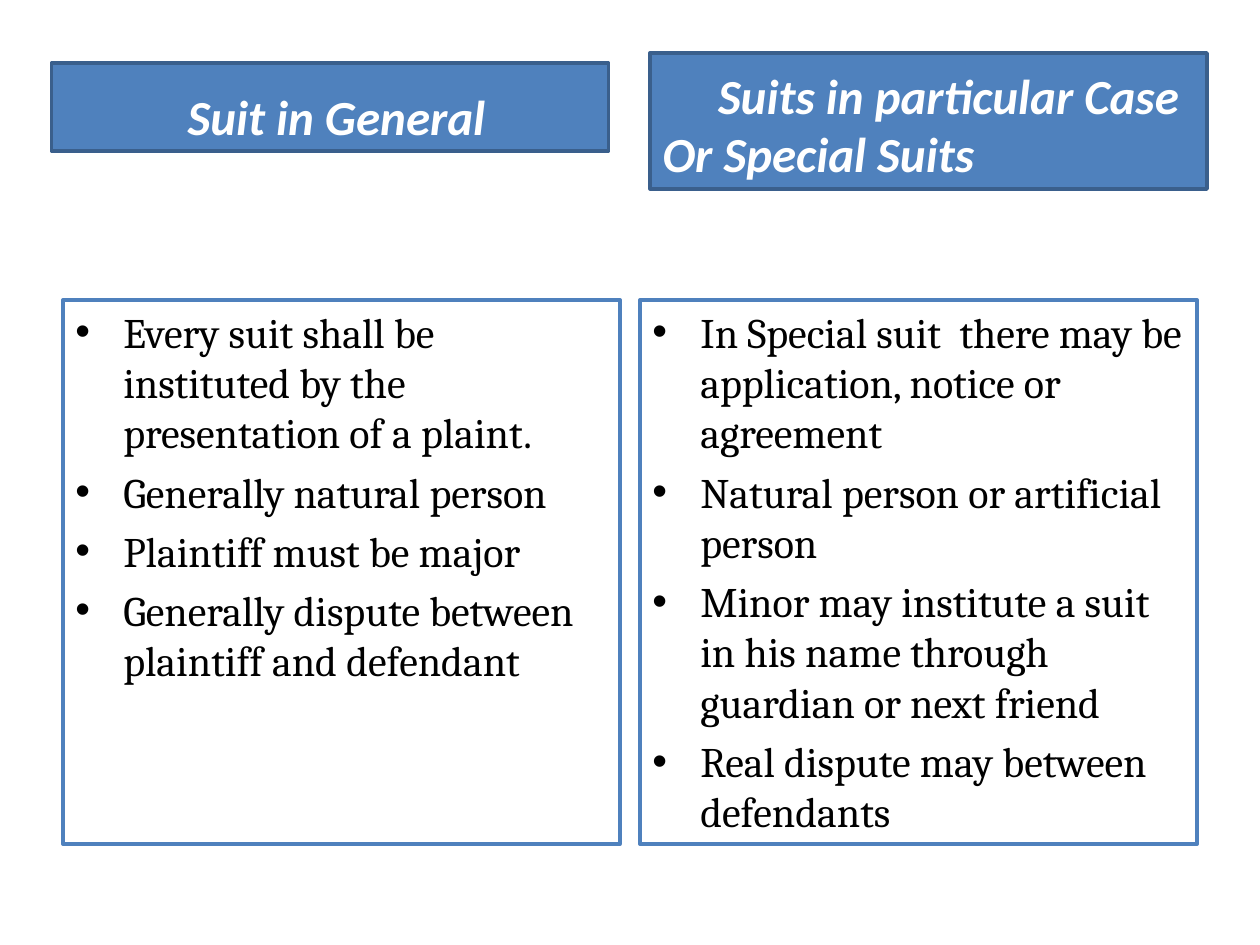
from pptx import Presentation
from pptx.dml.color import RGBColor
from pptx.enum.shapes import MSO_SHAPE
from pptx.enum.text import MSO_ANCHOR, PP_ALIGN
from pptx.oxml.ns import qn
from pptx.util import Inches, Pt
from lxml import etree

RECTANGLE = MSO_SHAPE.RECTANGLE
TOP, BOTTOM = MSO_ANCHOR.TOP, MSO_ANCHOR.BOTTOM
LEFT = PP_ALIGN.LEFT

BLUE = RGBColor(0x4F, 0x81, 0xBD)
DARK_BLUE = RGBColor(0x3A, 0x5F, 0x8C)
WHITE = RGBColor(0xFF, 0xFF, 0xFF)
BLACK = RGBColor(0, 0, 0)

COLUMN_WIDTH = 4.42
LIST_TOP, LIST_HEIGHT = 2.38, 4.32
HANGING = 0.38

COLUMNS = [
    {
        "heading": "Suit in General",
        "heading_place": (0.41, 0.5, 0.7),  # left, top, height
        "heading_indent": 0.98,
        "list_left": 0.5,
        "points": [
            "Every suit shall be instituted by the presentation of a plaint.",
            "Generally natural person",
            "Plaintiff must be major",
            "Generally dispute between plaintiff and defendant",
        ],
    },
    {
        "heading": "Suits in particular Case Or Special Suits",
        "heading_place": (5.16, 0.42, 1.08),
        "heading_indent": 0.44,
        "list_left": 5.08,
        "points": [
            "In Special suit  there may be application, notice or agreement",
            "Natural person or artificial person",
            "Minor may institute a suit in his name through guardian or next friend",
            "Real dispute may between defendants",
        ],
    },
]


def add_box(page, left, top, height, fill, line, anchor):
    box = page.shapes.add_shape(
        RECTANGLE, Inches(left), Inches(top), Inches(COLUMN_WIDTH), Inches(height))
    box.shadow.inherit = False
    box.fill.solid()
    box.fill.fore_color.rgb = fill
    box.line.color.rgb = line
    box.line.width = Pt(2)
    box.text_frame.word_wrap = True
    box.text_frame.vertical_anchor = anchor
    return box


def write(para, text, *, size, font, color, bold=False, italic=False,
          margin=0, indent=0, bullet=None):
    para.alignment = LEFT
    para.space_before = Pt(5)
    span = para.add_run()
    span.text = text
    span.font.size = Pt(size)
    span.font.name = font
    span.font.color.rgb = color
    span.font.bold = bold
    span.font.italic = italic
    properties = para._p.get_or_add_pPr()
    properties.set("marL", str(Inches(margin)))
    properties.set("indent", str(Inches(indent)))
    if bullet:
        etree.SubElement(properties, qn("a:buFont")).set("typeface", "Arial")
        etree.SubElement(properties, qn("a:buChar")).set("char", bullet)


def add_heading(page, column):
    box = add_box(page, *column["heading_place"], BLUE, DARK_BLUE, BOTTOM)
    write(box.text_frame.paragraphs[0], column["heading"], size=28,
          font="Calibri", color=WHITE, bold=True, italic=True,
          indent=column["heading_indent"])


def add_points(page, column):
    box = add_box(page, column["list_left"], LIST_TOP, LIST_HEIGHT, WHITE, BLUE, TOP)
    frame = box.text_frame
    for number, point in enumerate(column["points"]):
        para = frame.add_paragraph() if number else frame.paragraphs[0]
        write(para, point, size=24, font="Cambria", color=BLACK,
              margin=HANGING, indent=-HANGING, bullet="•")


def main():
    deck = Presentation()
    deck.slide_width, deck.slide_height = Inches(10), Inches(7.5)
    page = deck.slides.add_slide(deck.slide_layouts[6])
    for column in COLUMNS:
        add_heading(page, column)
        add_points(page, column)
    deck.save("out.pptx")


if __name__ == "__main__":
    main()
